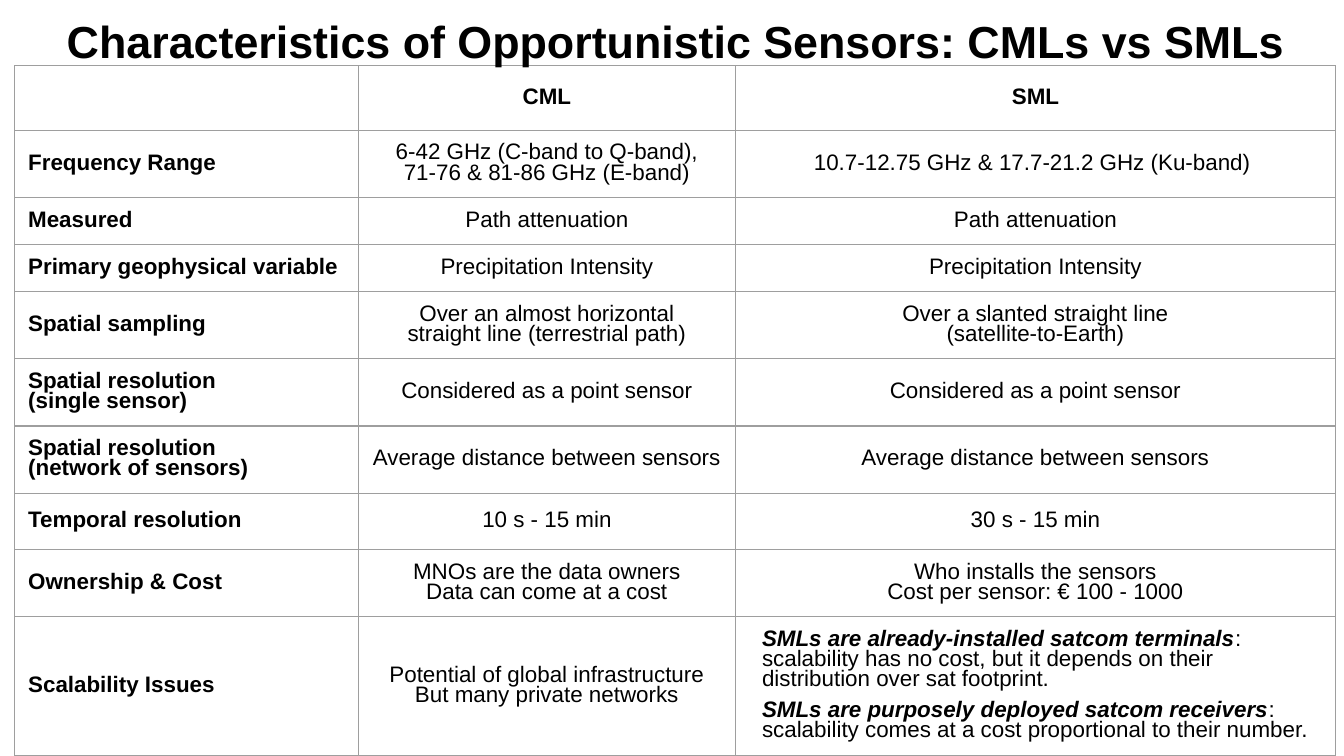
import pptx
import pptx.dml.color
import pptx.enum.text
import pptx.oxml
import pptx.oxml.ns
import pptx.util

# Content: a cell is a list of paragraphs; a pair is (emphasis, plain text)
TITLE = "Characteristics of Opportunistic Sensors: CMLs vs SMLs"
ROWS = [
    ([], ["CML"], ["SML"]),
    (["Frequency Range"],
     ["6-42 GHz (C-band to Q-band),", "71-76 & 81-86 GHz (E-band)"],
     ["10.7-12.75 GHz & 17.7-21.2 GHz (Ku-band) "]),
    (["Measured"], ["Path attenuation"], ["Path attenuation"]),
    (["Primary geophysical variable"],
     ["Precipitation Intensity"], ["Precipitation Intensity"]),
    (["Spatial sampling"],
     ["Over an almost horizontal\nstraight line (terrestrial path)"],
     ["Over a slanted straight line", "(satellite-to-Earth)"]),
    (["Spatial resolution\n(single sensor)"],
     ["Considered as a point sensor"], ["Considered as a point sensor"]),
    (["Spatial resolution\n(network of sensors)"],
     ["Average distance between sensors"],
     ["Average distance between sensors"]),
    (["Temporal resolution"], ["10 s - 15 min"], ["30 s - 15 min"]),
    (["Ownership & Cost"],
     ["MNOs are the data owners", "Data can come at a cost"],
     ["Who installs the sensors", "Cost per sensor: € 100 - 1000"]),
    (["Scalability Issues"],
     ["Potential of global infrastructure", "But many private networks"],
     [("SMLs are already-installed satcom terminals",
       ": scalability has no cost, but it depends on their "
       "distribution over sat footprint."),
      ("SMLs are purposely deployed satcom receivers",
       ": scalability comes at a cost proportional to their number.")]),
]

# Grid, in inches; the slide is 16:9
WIDE = 10
HIGH = WIDE * 9 / 16
LEFT, TOP = 0.11, 0.49
COLS = [2.56, 2.8, 4.47]
TALLS = [0.48, 0.5, 0.35, 0.35, 0.5, 0.5, 0.5, 0.42, 0.5, 1.03]

# Formats
INK, RULE = "000000", "9E9E9E"
INCH, PT = pptx.util.Inches, pptx.util.Pt
ALIGN = pptx.enum.text.PP_ALIGN
MID = pptx.enum.text.MSO_ANCHOR.MIDDLE
PAD = dict.fromkeys(
    ["margin_left", "margin_right", "margin_top", "margin_bottom"], INCH(0.1))


def color(code):
    return pptx.dml.color.RGBColor.from_string(code)


def apply(item, form):
    for key, val in form.items():
        setattr(item, key, val)


def write(para, text, **form):
    for num, line in enumerate(text.split("\n")):
        if num:
            para.add_line_break()
        run = para.add_run()
        run.text = line
        apply(run.font, {"name": "Arial", "size": PT(12), **form})
        run.font.color.rgb = color(INK)


def border(cell):
    props = cell._tc.get_or_add_tcPr()
    for spot, side in enumerate("LRTB"):
        line = pptx.oxml.parse_xml(
            f'<a:ln{side} {pptx.oxml.ns.nsdecls("a")} w="{PT(0.75)}">'
            f'<a:solidFill><a:srgbClr val="{RULE}"/></a:solidFill></a:ln{side}>')
        props.insert(spot, line)


def fill(cell, paras, bold, align):
    apply(cell, {**PAD, "vertical_anchor": MID})
    cell.fill.background()
    border(cell)
    frame = cell.text_frame
    if not paras:
        # Keep the blank corner from stretching its row
        end = pptx.oxml.parse_xml(
            f'<a:endParaRPr {pptx.oxml.ns.nsdecls("a")} sz="1200"/>')
        frame.paragraphs[0]._p.append(end)
    for num, part in enumerate(paras):
        para = frame.add_paragraph() if num else frame.paragraphs[0]
        apply(para, {"alignment": align, "line_spacing": 0.8})
        if isinstance(part, str):
            write(para, part, bold=bold)
            continue
        # Notes with an emphasised lead are set flush left
        cell.margin_left = INCH(0.2)
        apply(para, {"alignment": ALIGN.LEFT, "space_before": PT(6 * num)})
        write(para, part[0], bold=True, italic=True)
        write(para, part[1], bold=False, italic=False)


deck = pptx.Presentation()
apply(deck, {"slide_width": INCH(WIDE), "slide_height": INCH(HIGH)})
slide = deck.slides.add_slide(deck.slide_layouts[6])

# Comparison table
table = slide.shapes.add_table(
    len(ROWS), len(COLS), INCH(LEFT), INCH(TOP),
    INCH(sum(COLS)), INCH(sum(TALLS))).table
apply(table, {"first_row": False, "horz_banding": False})
for col, size in zip(table.columns, COLS):
    col.width = INCH(size)
for row, size in zip(table.rows, TALLS):
    row.height = INCH(size)
for y, row in enumerate(ROWS):
    for x, paras in enumerate(row):
        fill(table.cell(y, x), paras, x == 0 or y == 0,
             ALIGN.CENTER if x else ALIGN.LEFT)

# Title
box = slide.shapes.add_textbox(INCH(0.05), 0, INCH(9.95), INCH(0.53))
apply(box.text_frame, {**PAD, "word_wrap": True})
head = box.text_frame.paragraphs[0]
head.alignment = ALIGN.CENTER
write(head, TITLE, size=PT(24), bold=True)

deck.save("out.pptx")
